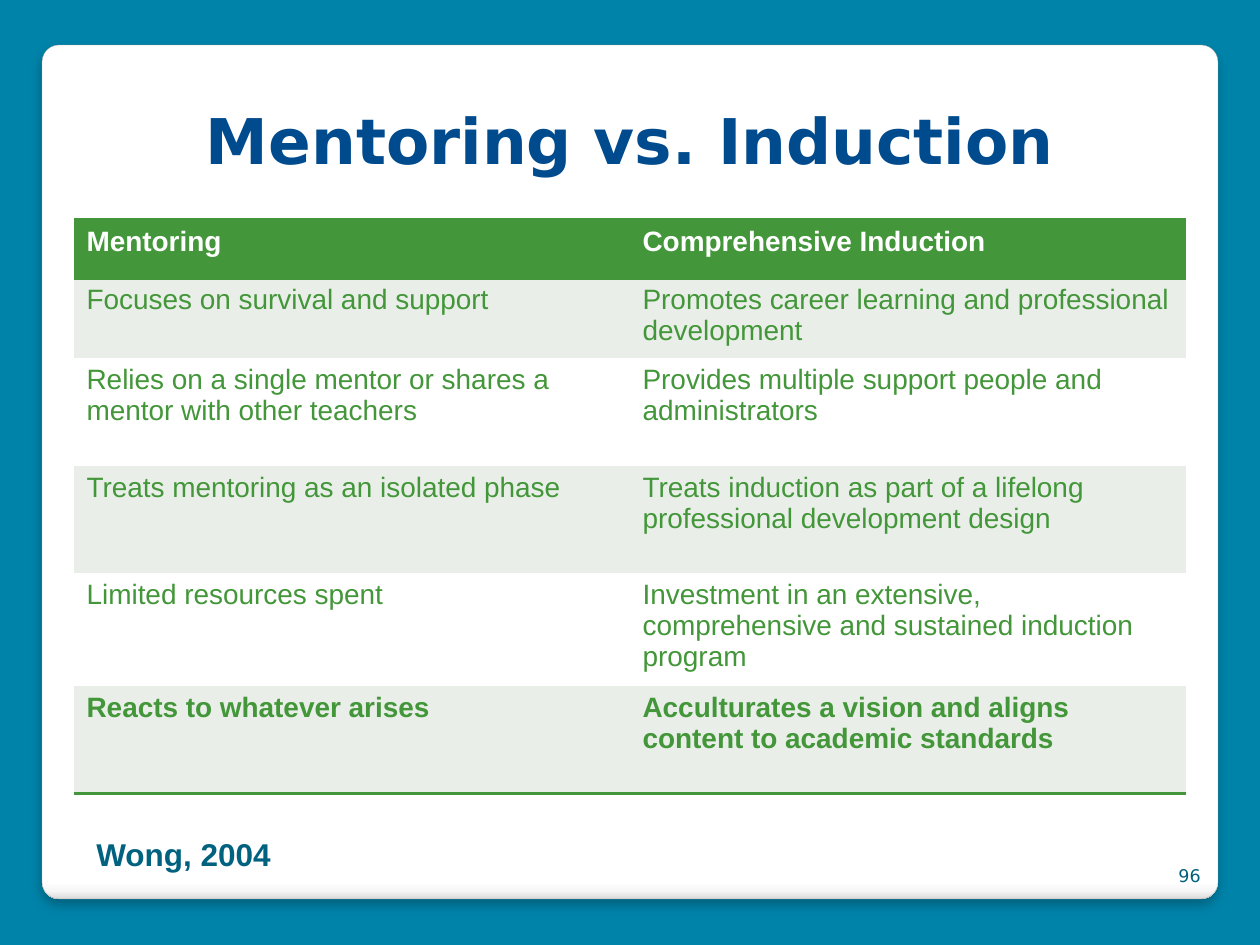
from pptx import Presentation
from pptx.dml.color import RGBColor
from pptx.enum.shapes import MSO_SHAPE
from pptx.enum.text import MSO_ANCHOR, PP_ALIGN
from pptx.oxml import parse_xml
from pptx.oxml.ns import nsdecls, qn
from pptx.util import Emu, Pt

HUES = {
    "back": "0083A9", "edge": "A4A4A4", "title": "004B8D", "page": "00617D",
    "green": "439639", "pale": "E9EFE8", "white": "FFFFFF", "cite": "00627F",
}
FADE = [(0, "FFFFFF"), (98, "FFFFFF"), (99, "F7F7F7"), (100, "DADADA")]
ROWS = [
    ("Mentoring", "Comprehensive Induction"),
    ("Focuses on survival and support",
     "Promotes career learning and professional development"),
    ("Relies on a single mentor or shares a mentor with other teachers",
     "Provides multiple support people and administrators"),
    ("Treats mentoring as an isolated phase",
     "Treats induction as part of a lifelong professional development design"),
    ("Limited resources spent",
     "Investment in an extensive, comprehensive and sustained induction program"),
    ("Reacts to whatever arises",
     "Acculturates a vision and aligns content to academic standards"),
]
HEIGHTS = [58, 78, 108, 107, 109, 107]


def box(*sides):
    return [Emu(round(n * 914400 / 126)) for n in sides]


def write(frame, text, size, font, hue, bold=False, align=PP_ALIGN.LEFT):
    frame.word_wrap = True
    para = frame.paragraphs[0]
    para.alignment = align
    run = para.add_run()
    run.text = text
    run.font.size = Pt(size)
    run.font.name = font
    run.font.bold = bold
    run.font.color.rgb = RGBColor.from_string(HUES[hue])


deck = Presentation()
deck.slide_width, deck.slide_height = box(1260, 945)
slide = deck.slides.add_slide(deck.slide_layouts[5])
slide.background.fill.solid()
slide.background.fill.fore_color.rgb = RGBColor.from_string(HUES["back"])
shapes = slide.shapes

card = shapes.add_shape(MSO_SHAPE.ROUNDED_RECTANGLE, *box(42, 45, 1176, 854))
card.adjustments[0] = 0.02
card.line.color.rgb = RGBColor.from_string(HUES["edge"])
card.line.width = Pt(0.16)
card.fill.gradient()
card.fill.gradient_angle = 270
stops = "".join(
    f'<a:gs pos="{pos * 1000}"><a:srgbClr val="{hue}"/></a:gs>' for pos, hue in FADE
)
props = card.element.spPr
grad = props.find(qn("a:gradFill"))
grad.replace(grad.find(qn("a:gsLst")),
             parse_xml(f'<a:gsLst {nsdecls("a")}>{stops}</a:gsLst>'))
card.shadow.inherit = False
props.find(qn("a:effectLst")).append(parse_xml(
    f'<a:outerShdw {nsdecls("a")} blurRad="{Pt(6)}" dist="{Pt(4)}" dir="5400000" '
    'algn="t" rotWithShape="0"><a:srgbClr val="000000"><a:alpha val="25000"/>'
    '</a:srgbClr></a:outerShdw>'))
shapes.element.insert(2, card.element)

title = shapes.title
title.left, title.top, title.width, title.height = box(84, 95, 1092, 145)
title.text_frame.vertical_anchor = MSO_ANCHOR.TOP
write(title.text_frame, "Mentoring vs. Induction", 36, "DejaVu Sans", "title",
      True, PP_ALIGN.CENTER)

page = shapes.add_textbox(*box(1150, 842, 63, 50)).text_frame
page.vertical_anchor = MSO_ANCHOR.BOTTOM
write(page, "96", 10, "DejaVu Sans", "page", align=PP_ALIGN.RIGHT)

table = shapes.add_table(len(ROWS), 2, *box(74, 220, 1112, sum(HEIGHTS))).table
table.horz_banding = False
style = table._tbl.tblPr.find(qn("a:tableStyleId"))
style.text = "{2D5ABB26-0587-4C30-8999-92F81FD0307C}"
for col in table.columns:
    col.width = box(556)[0]
last = len(ROWS) - 1
for i, (row, high) in enumerate(zip(ROWS, HEIGHTS)):
    table.rows[i].height = box(high)[0]
    fill = "green" if i == 0 else "pale" if i % 2 else "white"
    for j, text in enumerate(row):
        cell = table.cell(i, j)
        cell.fill.solid()
        cell.fill.fore_color.rgb = RGBColor.from_string(HUES[fill])
        write(cell.text_frame, text, 16, "Arial",
              "green" if i else "white", i in (0, last))
        for side in {0: "BT", last: "B"}.get(i, ""):
            cell._tc.tcPr.insert(0, parse_xml(
                f'<a:ln{side} {nsdecls("a")} w="{Pt(2)}"><a:solidFill>'
                f'<a:srgbClr val="{HUES["green"]}"/></a:solidFill></a:ln{side}>'))

cite = shapes.add_textbox(*box(84, 829, 525, 50)).text_frame
write(cite, "Wong, 2004", 18, "Arial", "cite", True)

deck.save("out.pptx")
